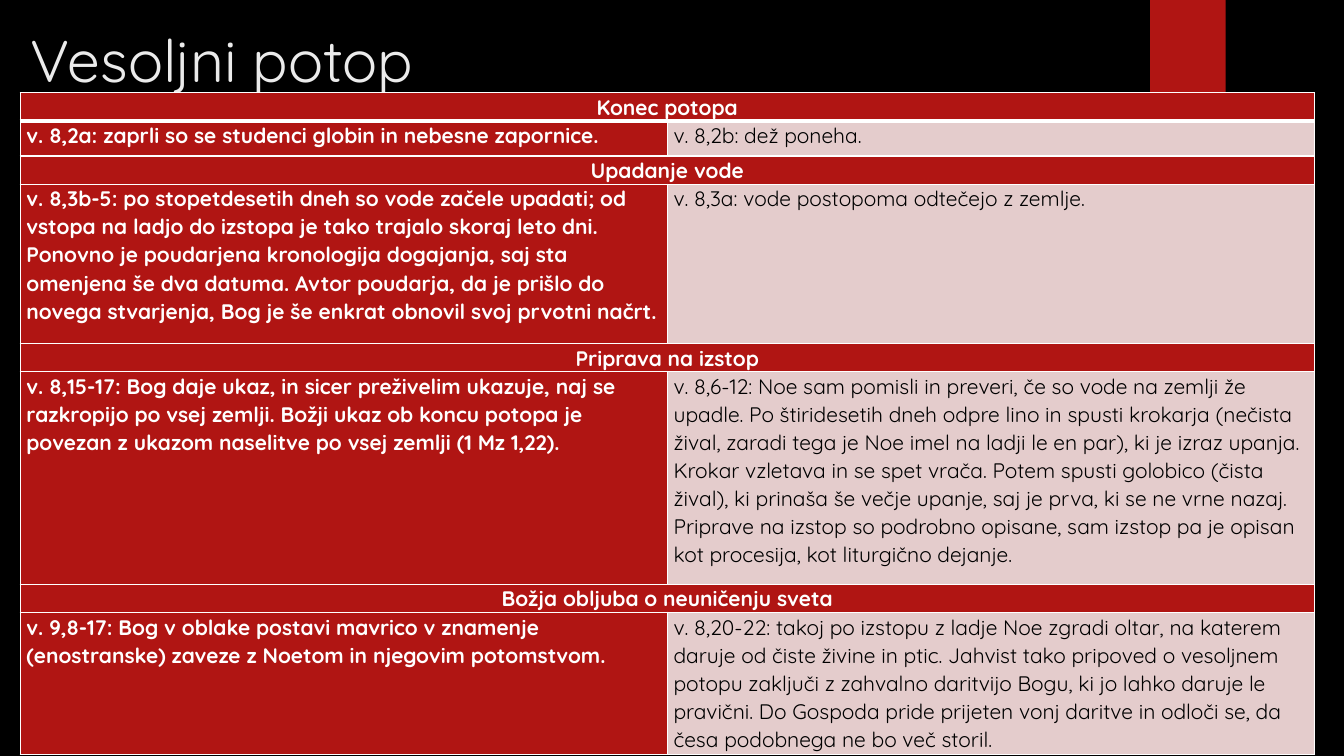
from lxml import etree
from pptx import Presentation
from pptx.dml.color import RGBColor
from pptx.enum.shapes import MSO_SHAPE as Shape
from pptx.enum.text import MSO_ANCHOR as Anchor, PP_ALIGN as Align
from pptx.oxml.ns import qn
from pptx.util import Pt

FONT = "Quicksand"
RED, PINK, WHITE, BLACK = "B01513", "E4CCCC", "FFFFFF", "000000"
HEADING_HEIGHT = 12.24

SECTIONS = [
    ("Konec potopa", 25.2,
     "v. 8,2a: zaprli so se studenci globin in nebesne zapornice.",
     "v. 8,2b: dež poneha."),
    ("Upadanje vode", 113.76,
     "v. 8,3b-5: po stopetdesetih dneh so vode začele upadati; od vstopa na ladjo do "
     "izstopa je tako trajalo skoraj leto dni. Ponovno je poudarjena kronologija dogajanja, "
     "saj sta omenjena še dva datuma. Avtor poudarja, da je prišlo do novega stvarjenja, "
     "Bog je še enkrat obnovil svoj prvotni načrt.",
     "v. 8,3a: vode postopoma odtečejo z zemlje."),
    ("Priprava na izstop", 151.92,
     "v. 8,15-17: Bog daje ukaz, in sicer preživelim ukazuje, naj se razkropijo po vsej "
     "zemlji. Božji ukaz ob koncu potopa je povezan z ukazom naselitve po vsej zemlji "
     "(1 Mz 1,22).",
     "v. 8,6-12: Noe sam pomisli in preveri, če so vode na zemlji že upadle. Po štiridesetih "
     "dneh odpre lino in spusti krokarja (nečista žival, zaradi tega je Noe imel na ladji le "
     "en par), ki je izraz upanja. Krokar vzletava in se spet vrača. Potem spusti golobico "
     "(čista žival), ki prinaša še večje upanje, saj je prva, ki se ne vrne nazaj. Priprave "
     "na izstop so podrobno opisane, sam izstop pa je opisan kot procesija, kot liturgično "
     "dejanje."),
    ("Božja obljuba o neuničenju sveta", 101.52,
     "v. 9,8-17: Bog v oblake postavi mavrico v znamenje (enostranske) zaveze z Noetom in "
     "njegovim potomstvom.",
     "v. 8,20-22: takoj po izstopu z ladje Noe zgradi oltar, na katerem daruje od čiste "
     "živine in ptic. Jahvist tako pripoved o vesoljnem potopu zaključi z zahvalno daritvijo "
     "Bogu, ki jo lahko daruje le pravični. Do Gospoda pride prijeten vonj daritve in odloči "
     "se, da česa podobnega ne bo več storil."),
]


def color(value):
    """Turn a hex string into a colour."""
    return RGBColor.from_string(value)


def style_font(font, size, value, bold=False):
    """Set typeface, size, colour and weight."""
    font.name, font.size, font.bold = FONT, Pt(size), bold
    font.color.rgb = color(value)


def add_ribbon(slide, left, top, width, height):
    """Draw the red ribbon hanging from the top edge."""
    ribbon = slide.shapes.add_shape(Shape.RECTANGLE, Pt(left), Pt(top), Pt(width), Pt(height))
    ribbon.shadow.inherit = False
    ribbon.fill.solid()
    ribbon.fill.fore_color.rgb = color(RED)
    ribbon.line.fill.background()


def set_title(slide, text, left, top, width, height):
    """Place and format the title placeholder."""
    title = slide.shapes.title
    title.left, title.top, title.width, title.height = Pt(left), Pt(top), Pt(width), Pt(height)
    frame = title.text_frame
    frame.text = text
    frame.word_wrap = True
    frame.vertical_anchor = Anchor.TOP
    paragraph = frame.paragraphs[0]
    paragraph.alignment = Align.LEFT
    style_font(paragraph.runs[0].font, 42, "EBEBEB")


def set_borders(cell, top, bottom):
    """Give a cell white borders, with the top and bottom widths in points."""
    properties = cell._tc.get_or_add_tcPr()
    for side, width in (("L", 1), ("R", 1), ("T", top), ("B", bottom)):
        line = etree.SubElement(properties, qn(f"a:ln{side}"), w=str(Pt(width)))
        fill = etree.SubElement(line, qn("a:solidFill"))
        etree.SubElement(fill, qn("a:srgbClr"), val=WHITE)


def fill_cell(cell, text, fill, text_color, bold, alignment):
    """Write and format one table cell."""
    cell.fill.solid()
    cell.fill.fore_color.rgb = color(fill)
    cell.margin_left = cell.margin_right = Pt(4.5)
    cell.margin_top = cell.margin_bottom = Pt(0)
    cell.text_frame.text = text
    paragraph = cell.text_frame.paragraphs[0]
    paragraph.alignment = alignment
    paragraph.line_spacing = 1.07
    style_font(paragraph.runs[0].font, 15, text_color, bold)


def add_comparison(slide, left, top, width):
    """Build the table with a merged heading above each pair of accounts."""
    heights = [height for section in SECTIONS for height in (HEADING_HEIGHT, section[1])]
    table = slide.shapes.add_table(
        len(heights), 2, Pt(left), Pt(top), Pt(width), Pt(sum(heights))).table
    for column in table.columns:
        column.width = Pt(width / 2)
    for index, height in enumerate(heights):
        table.rows[index].height = Pt(height)
        for cell in table.rows[index].cells:
            set_borders(cell, 3 if index == 1 else 1, 3 if index == 0 else 1)
    for index, (heading, _, first, second) in enumerate(SECTIONS):
        row = 2 * index
        table.cell(row, 0).merge(table.cell(row, 1))
        fill_cell(table.cell(row, 0), heading, RED, WHITE, True, Align.CENTER)
        fill_cell(table.cell(row + 1, 0), first, RED, WHITE, True, Align.LEFT)
        fill_cell(table.cell(row + 1, 1), second, PINK, BLACK, False, Align.LEFT)


def main():
    """Build and save the presentation."""
    presentation = Presentation()
    presentation.slide_width, presentation.slide_height = Pt(960), Pt(540)
    slide = presentation.slides.add_slide(presentation.slide_layouts[5])
    slide.background.fill.solid()
    slide.background.fill.fore_color.rgb = color(BLACK)
    add_ribbon(slide, 821.5, 0, 54, 90)
    set_title(slide, "Vesoljni potop", 14.4, 13, 802, 107)
    add_comparison(slide, 14.4, 66.25, 924.5)
    presentation.save("out.pptx")


if __name__ == "__main__":
    main()
